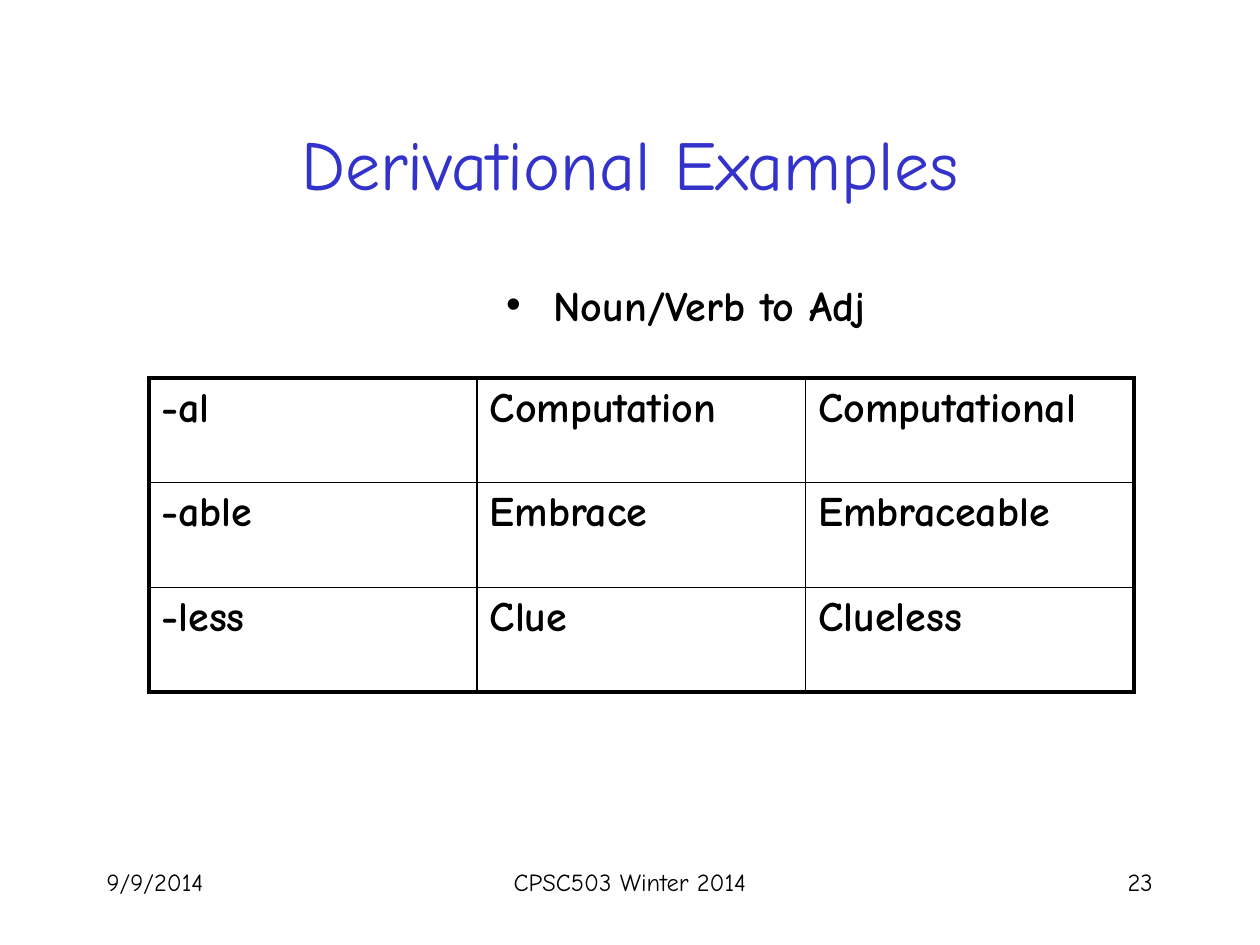
from lxml import etree
from pptx import Presentation
from pptx.dml.color import RGBColor
from pptx.enum.text import MSO_ANCHOR, MSO_AUTO_SIZE, PP_ALIGN
from pptx.oxml.ns import qn
from pptx.util import Cm, Pt

LEFT, CENTER, RIGHT = PP_ALIGN.LEFT, PP_ALIGN.CENTER, PP_ALIGN.RIGHT
TOP, MIDDLE = MSO_ANCHOR.TOP, MSO_ANCHOR.MIDDLE
NO_AUTOFIT = MSO_AUTO_SIZE.NONE

COLORS = {"title": "3333CC", "text": "000000", "border": "000000"}
FONT = "Comic Neue"
THICK, THIN = Pt(2.25), Pt(1)

ROWS = [
    ["-al", "Computation", "Computational"],
    ["-able", "Embrace", "Embraceable"],
    ["-less", "Clue", "Clueless"],
]


def write_text(frame, text, size=24, color="text", bold=False, align=LEFT):
    """Put one formatted paragraph in a text frame and return it."""
    para = frame.paragraphs[0]
    para.alignment = align
    span = para.add_run()
    span.text = text
    span.font.name = FONT
    span.font.size = Pt(size)
    span.font.bold = bold
    span.font.color.rgb = RGBColor.from_string(COLORS[color])
    return para


def set_space_before(para, percent):
    """Set paragraph spacing relative to the text size."""
    spacing = etree.Element(qn("a:spcBef"))
    etree.SubElement(spacing, qn("a:spcPct"), val=str(percent * 1000))
    para._p.get_or_add_pPr().insert(0, spacing)


def set_borders(cell, widths):
    """Draw cell borders; widths maps L, R, T, B to a line width."""
    properties = cell._tc.get_or_add_tcPr()
    for index, side in enumerate("LRTB"):
        line = etree.Element(qn(f"a:ln{side}"), w=str(widths[side]))
        fill = etree.SubElement(line, qn("a:solidFill"))
        etree.SubElement(fill, qn("a:srgbClr"), val=COLORS["border"])
        properties.insert(index, line)


class SlideBuilder:
    def __init__(self, slide):
        self.slide = slide

    def placeholder(self, index, text, left, top, width, height, anchor=TOP, **style):
        box = self.slide.placeholders[index]
        box.left, box.top, box.width, box.height = map(Cm, (left, top, width, height))
        frame = box.text_frame
        frame.auto_size = NO_AUTOFIT
        frame.vertical_anchor = anchor
        write_text(frame, text, **style)

    def footer(self, text, left, width, align):
        box = self.slide.shapes.add_textbox(Cm(left), Cm(17.36), Cm(width), Cm(1.27))
        box.text_frame.word_wrap = True
        write_text(box.text_frame, text, size=14, align=align)

    def table(self, rows, left, top, column_width, row_height):
        last_row, last_column = len(rows) - 1, len(rows[0]) - 1
        table = self.slide.shapes.add_table(
            len(rows), len(rows[0]), Cm(left), Cm(top),
            Cm(column_width * len(rows[0])), Cm(row_height * len(rows)),
        ).table
        table.first_row = table.horz_banding = False
        for column in table.columns:
            column.width = Cm(column_width)
        for r, words in enumerate(rows):
            table.rows[r].height = Cm(row_height)
            for c, word in enumerate(words):
                cell = table.cell(r, c)
                cell.fill.background()
                set_space_before(write_text(cell.text_frame, word, bold=True), 20)
                # Thick frame outside, thin grid inside
                set_borders(cell, {
                    "L": THICK if c == 0 else THIN,
                    "R": THICK if c == last_column else THIN,
                    "T": THICK if r == 0 else THIN,
                    "B": THICK if r == last_row else THIN,
                })


def main():
    deck = Presentation()
    deck.slide_width, deck.slide_height = Cm(25.4), Cm(19.05)
    page = SlideBuilder(deck.slides.add_slide(deck.slide_layouts[1]))

    # Title and bullet
    page.placeholder(0, "Derivational Examples", 1.9, 1.69, 21.59, 3.18,
                     anchor=MIDDLE, size=40, color="title", align=CENTER)
    page.placeholder(1, "Noun/Verb to Adj", 9.95, 5.5, 10.58, 11.43, bold=True)

    # Suffix table
    page.table(ROWS, left=3, top=7.62, column_width=6.62, row_height=2.11)

    # Footer line
    page.footer("9/9/2014", 1.9, 5.29, LEFT)
    page.footer("CPSC503 Winter 2014", 8.68, 8.04, CENTER)
    page.footer("23", 18.2, 5.29, RIGHT)

    deck.save("out.pptx")


if __name__ == "__main__":
    main()
